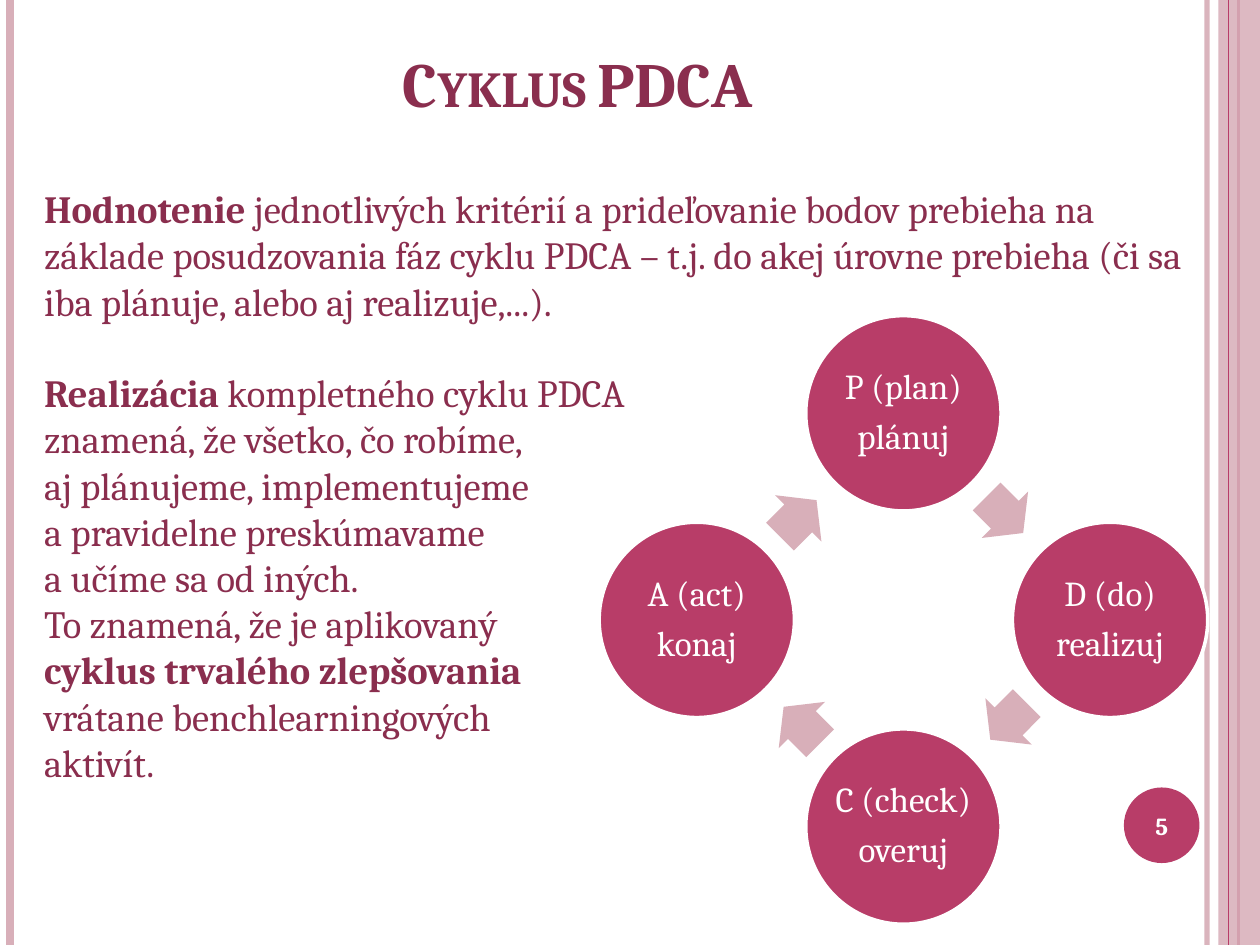
from math import cos, radians, sin

from lxml.etree import SubElement
from pptx import Presentation
from pptx.dml.color import RGBColor
from pptx.enum.shapes import MSO_CONNECTOR, MSO_SHAPE
from pptx.enum.text import MSO_ANCHOR, MSO_AUTO_SIZE, PP_ALIGN
from pptx.oxml.ns import qn
from pptx.util import Inches, Pt

THEME = {
    "font": "Cambria",
    "text": "8A2E4E",
    "accent": "B83D68",
    "soft": "D8AFB9",
    "white": "FFFFFF",
    "title_size": 36,
    "body_size": 22,
    "phase_size": 20,
    "number_size": 14,
}

TITLE = "Cyklus PDCA"
PAGE_NUMBER = "5"
BODY = [
    [("Hodnotenie", True),
     (" jednotlivých kritérií a prideľovanie bodov prebieha na základe posudzovania "
      "fáz cyklu PDCA – t.j. do akej úrovne prebieha (či sa iba plánuje, alebo aj "
      "realizuje,...).", False)],
    [("Realizácia", True), (" kompletného cyklu PDCA", False)],
    [("znamená, že všetko, čo robíme, \naj plánujeme, implementujeme", False)],
    [("a pravidelne preskúmavame", False)],
    [("a učíme sa od iných. \nTo znamená, že je aplikovaný", False)],
    [("cyklus trvalého zlepšovania", True)],
    [("vrátane benchlearningových", False)],
    [("aktivít.", False)],
]
SECTION_START = 1
SECTION_GAP = 26
PHASES = [
    ("P (plan)", "plánuj"),
    ("D (do)", "realizuj"),
    ("C (check)", "overuj"),
    ("A (act)", "konaj"),
]
BACK_RULES = [(9.58, "soft", 3, 93), (0.08, "soft", 4.5, 100), (9.83, "accent", 1.5, 100)]
FRONT_RULE = (9.75, "accent", 0.75, 100)
SIDE_BAND = (9.67, 0, 0.33, 7.5)
NUMBER_BADGE = (8.92, 6.25, 0.6, 0.6)
TITLE_BOX = (0, 0, 9.17, 1)
BODY_BOX = (0.25, 1.42, 9.33, 4.91)
SLIDE_SIZE = (10, 7.5)
RING_CENTER = (7.17, 4.92)
RING_RADIUS = 1.64
PHASE_DIAMETER = 1.55
ARROW_SIZE = (0.41, 0.52)
ARROW_SETBACK = 0.02


def color(name):
    return RGBColor.from_string(THEME[name])


def set_alpha(fill, percent):
    if percent < 100:
        clr = fill._xPr.find(".//" + qn("a:srgbClr"))
        SubElement(clr, qn("a:alpha")).set("val", str(percent * 1000))


def place(item, box):
    item.left, item.top, item.width, item.height = map(Inches, box)


def write(paragraph, text, size, tone, bold=False, align=PP_ALIGN.LEFT,
          small_caps=False, before=0, after=0, leading=1.0):
    paragraph.alignment = align
    paragraph.space_before = Pt(before)
    paragraph.space_after = Pt(after)
    paragraph.line_spacing = leading
    for index, line in enumerate(text.split("\n")):
        if index:
            paragraph.add_line_break()
        run = paragraph.add_run()
        run.text = line
        run.font.name = THEME["font"]
        run.font.size = Pt(THEME[size])
        run.font.bold = bold
        run.font.color.rgb = color(tone)
        if small_caps:
            run.font._element.set("cap", "small")


def add_rule(slide, x, tone, width, opacity):
    rule = slide.shapes.add_connector(
        MSO_CONNECTOR.STRAIGHT, Inches(x), 0, Inches(x), Inches(SLIDE_SIZE[1]))
    rule.line.color.rgb = color(tone)
    rule.line.width = Pt(width)
    set_alpha(rule.line.fill, opacity)
    SubElement(rule._element.spPr, qn("a:effectLst"))


def add_block(slide, kind, box, tone, outline=None, opacity=100):
    block = slide.shapes.add_shape(kind, *map(Inches, box))
    block.shadow.inherit = False
    block.fill.solid()
    block.fill.fore_color.rgb = color(tone)
    set_alpha(block.fill, opacity)
    if outline:
        block.line.color.rgb = color("white")
        block.line.width = Pt(outline)
    else:
        block.line.fill.background()
    frame = block.text_frame
    frame.word_wrap = False
    frame.vertical_anchor = MSO_ANCHOR.MIDDLE
    frame.margin_left = frame.margin_right = Inches(0.03)
    frame.margin_top = frame.margin_bottom = Inches(0.03)
    return block


def centered(x, y, width, height):
    return x - width / 2, y - height / 2, width, height


def on_ring(angle, radius):
    return (RING_CENTER[0] + radius * cos(radians(angle)),
            RING_CENTER[1] + radius * sin(radians(angle)))


def add_cycle(slide):
    step = 360 / len(PHASES)
    for index, labels in enumerate(PHASES):
        angle = index * step - 90
        circle = add_block(
            slide, MSO_SHAPE.OVAL,
            centered(*on_ring(angle, RING_RADIUS), PHASE_DIAMETER, PHASE_DIAMETER),
            "accent", outline=2)
        frame = circle.text_frame
        for row, label in enumerate(labels):
            paragraph = frame.add_paragraph() if row else frame.paragraphs[0]
            write(paragraph, label, "phase_size", "white",
                  align=PP_ALIGN.CENTER, after=7, leading=0.9)

        heading = angle + step / 2 + 90
        x, y = on_ring(angle + step / 2, RING_RADIUS * cos(radians(step / 2)))
        x -= ARROW_SETBACK * cos(radians(heading))
        y -= ARROW_SETBACK * sin(radians(heading))
        arrow = add_block(slide, MSO_SHAPE.RIGHT_ARROW, centered(x, y, *ARROW_SIZE), "soft")
        arrow.adjustments[0] = 0.6
        arrow.adjustments[1] = 0.5
        arrow.rotation = heading


def fill_title(title):
    place(title, TITLE_BOX)
    title.text_frame.vertical_anchor = MSO_ANCHOR.BOTTOM
    title.text_frame.auto_size = MSO_AUTO_SIZE.NONE
    write(title.text_frame.paragraphs[0], TITLE, "title_size", "text",
          bold=True, align=PP_ALIGN.CENTER, small_caps=True)


def fill_body(body):
    place(body, BODY_BOX)
    frame = body.text_frame
    frame.word_wrap = True
    frame.auto_size = MSO_AUTO_SIZE.NONE
    for index, parts in enumerate(BODY):
        paragraph = frame.add_paragraph() if index else frame.paragraphs[0]
        gap = SECTION_GAP if index == SECTION_START else 0
        for text, bold in parts:
            write(paragraph, text, "body_size", "text", bold=bold, before=gap)
        properties = paragraph._p.get_or_add_pPr()
        properties.set("marL", "0")
        properties.set("indent", "0")
        SubElement(properties, qn("a:buNone"))


def main():
    deck = Presentation()
    deck.slide_width, deck.slide_height = map(Inches, SLIDE_SIZE)
    slide = deck.slides.add_slide(deck.slide_layouts[1])
    for rule in BACK_RULES:
        add_rule(slide, *rule)
    add_block(slide, MSO_SHAPE.RECTANGLE, SIDE_BAND, "soft", opacity=87)
    add_rule(slide, *FRONT_RULE)
    badge = add_block(slide, MSO_SHAPE.OVAL, NUMBER_BADGE, "accent")
    write(badge.text_frame.paragraphs[0], PAGE_NUMBER, "number_size", "white",
          bold=True, align=PP_ALIGN.CENTER)
    fill_title(slide.shapes.title)
    add_cycle(slide)
    fill_body(slide.placeholders[1])
    deck.save("out.pptx")


if __name__ == "__main__":
    main()
